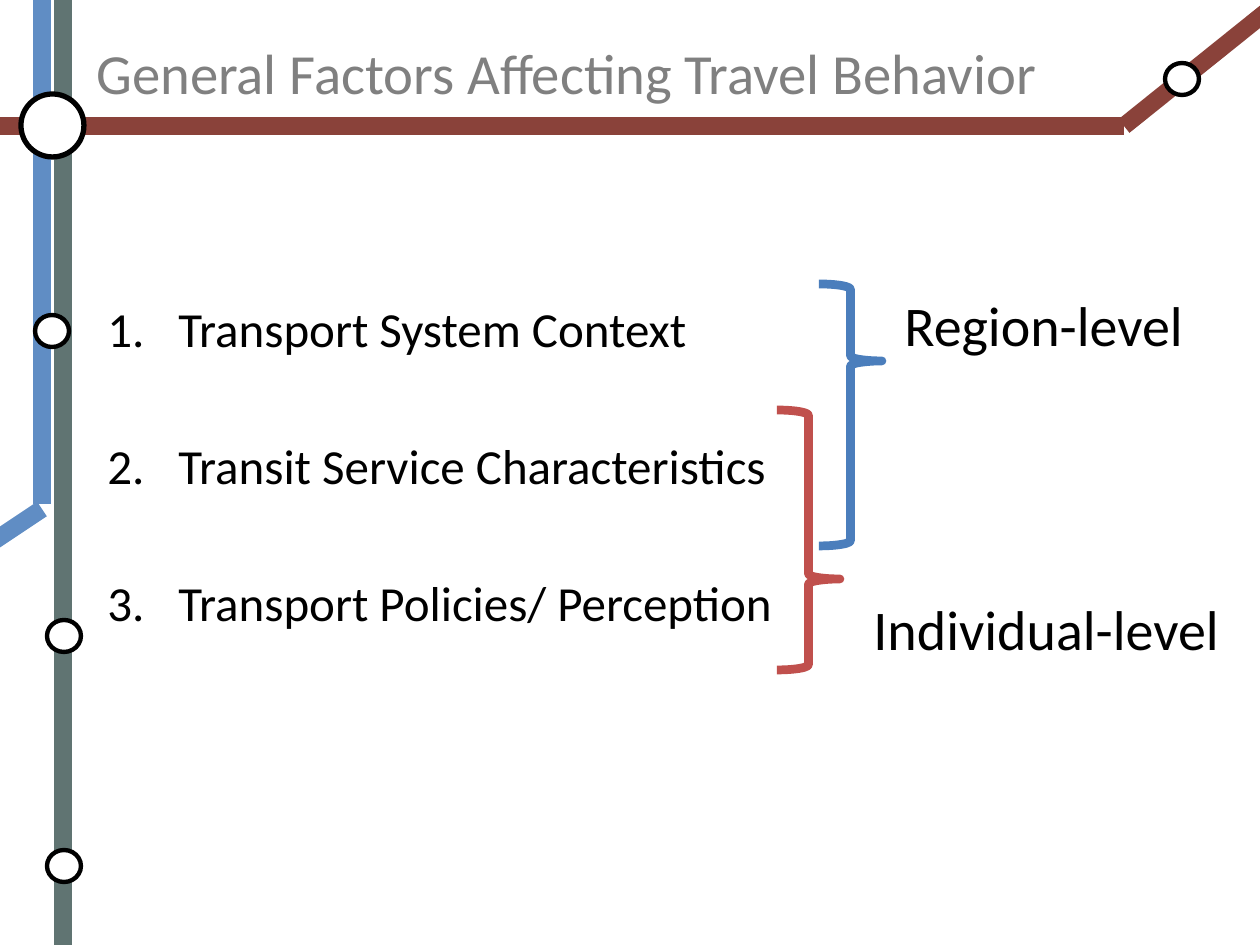
from lxml import etree
from pptx import Presentation
from pptx.dml.color import RGBColor
from pptx.enum.shapes import MSO_CONNECTOR, MSO_SHAPE
from pptx.enum.text import MSO_ANCHOR, MSO_AUTO_SIZE
from pptx.oxml.ns import qn
from pptx.util import Emu, Pt

STRAIGHT = MSO_CONNECTOR.STRAIGHT
OVAL = MSO_SHAPE.OVAL
RIGHT_BRACE = MSO_SHAPE.RIGHT_BRACE
TOP, MIDDLE = MSO_ANCHOR.TOP, MSO_ANCHOR.MIDDLE
GROW = MSO_AUTO_SIZE.SHAPE_TO_FIT_TEXT

EMU_PER_PX = 914400 / 126
FONT = "Calibri"
GREEN, BLUE, RED = "607472", "608DC4", "8A423A"
BLACK, WHITE, GREY = "000000", "FFFFFF", "808080"
RAIL_WIDTH = 10
STATION_SIZE = (34, 32)
FACTORS = [
    "Transport System Context",
    "Transit Service Characteristics",
    "Transport Policies/ Perception",
]


def px(length):
    """Turn pixels into EMU."""
    return Emu(round(length * EMU_PER_PX))


def color(code):
    """Turn a hex string into a colour."""
    return RGBColor.from_string(code)


def set_line(shape, code, width):
    """Give a shape or connector its line colour and width."""
    shape.line.color.rgb = color(code)
    shape.line.width = Pt(width)


def add_rail(page, start, end, code):
    """Draw one straight stretch of a transit line."""
    rail = page.shapes.add_connector(STRAIGHT, *map(px, start + end))
    set_line(rail, code, RAIL_WIDTH)
    properties = rail._element.find(qn("p:spPr"))
    etree.SubElement(properties, qn("a:effectLst"))


def add_station(page, box, width):
    """Draw a white stop with a black ring."""
    station = page.shapes.add_shape(OVAL, *map(px, box))
    station.shadow.inherit = False
    station.fill.solid()
    station.fill.fore_color.rgb = color(WHITE)
    set_line(station, BLACK, width)


def add_text(page, box, lines, size, code, anchor=TOP):
    """Write one paragraph per line and return the text frame."""
    frame = page.shapes.add_textbox(*map(px, box)).text_frame
    frame.word_wrap = True
    frame.vertical_anchor = anchor
    frame.text = "\n".join(lines)
    for para in frame.paragraphs:
        for span in para.runs:
            span.font.name = FONT
            span.font.size = Pt(size)
            span.font.color.rgb = color(code)
    return frame


def add_transit_map(page, box):
    """Draw the rails and stations that frame the page."""
    left, top, width, height = box
    right, bottom = left + width, top + height
    blue_x, green_x, red_y = left + 42, left + 63, top + 126
    bend_x = right - 136
    add_rail(page, (green_x, bottom), (green_x, top), GREEN)
    add_rail(page, (blue_x, top + 504), (blue_x, top), BLUE)
    add_rail(page, (blue_x, top + 509), (left - 21, top + 551), BLUE)
    add_rail(page, (left, red_y), (bend_x, red_y), RED)
    add_rail(page, (right + 21, top), (bend_x, red_y), RED)
    add_station(page, (left + 21, red_y - 32, 63, 63), 3)
    for x, y in ((47, 620), (47, 850), (35, 315), (1165, 63)):
        add_station(page, (left + x, top + y, *STATION_SIZE), 2.5)


def add_title(page, box):
    """Write the heading above the red rail."""
    title = "General Factors Affecting Travel Behavior"
    add_text(page, box, [title], 32.4, GREY, MIDDLE)


def add_factors(page, box):
    """Write the numbered list of factors."""
    frame = add_text(page, box, FACTORS, 28, BLACK)
    for para in frame.paragraphs:
        para.space_after = Pt(44.7)
        properties = para._p.get_or_add_pPr()
        properties.set("marL", str(px(71)))
        properties.set("indent", str(px(-71)))
        font = etree.SubElement(properties, qn("a:buFont"))
        font.set("typeface", FONT)
        number = etree.SubElement(properties, qn("a:buAutoNum"))
        number.set("type", "arabicPeriod")


def add_level(page, box, code, tip, label, label_offset, label_width):
    """Bracket the factors of one level and name it."""
    left, top, width, height = box
    brace = page.shapes.add_shape(RIGHT_BRACE, *map(px, box))
    brace.shadow.inherit = False
    brace.fill.background()
    brace.adjustments[0] = 0.083
    brace.adjustments[1] = tip
    set_line(brace, code, 5)
    x, y = label_offset
    label_box = (left + x, top + y, label_width, 81)
    add_text(page, label_box, [label], 32, BLACK).auto_size = GROW


def main():
    """Build the deck and save it."""
    deck = Presentation()
    deck.slide_width, deck.slide_height = px(1260), px(945)
    page = deck.slides.add_slide(deck.slide_layouts[6])
    add_transit_map(page, (0, 0, 1260, 945))
    add_title(page, (84, 38, 1040, 67))
    add_factors(page, (95, 292, 798, 552))
    add_level(page, (819, 284, 63, 262), "4B7EBC", 0.294,
              "Region-level", (73, 0), 315)
    add_level(page, (777, 410, 63, 260), "C0504D", 0.65,
              "Individual-level", (84, 178), 399)
    deck.save("out.pptx")


if __name__ == "__main__":
    main()
